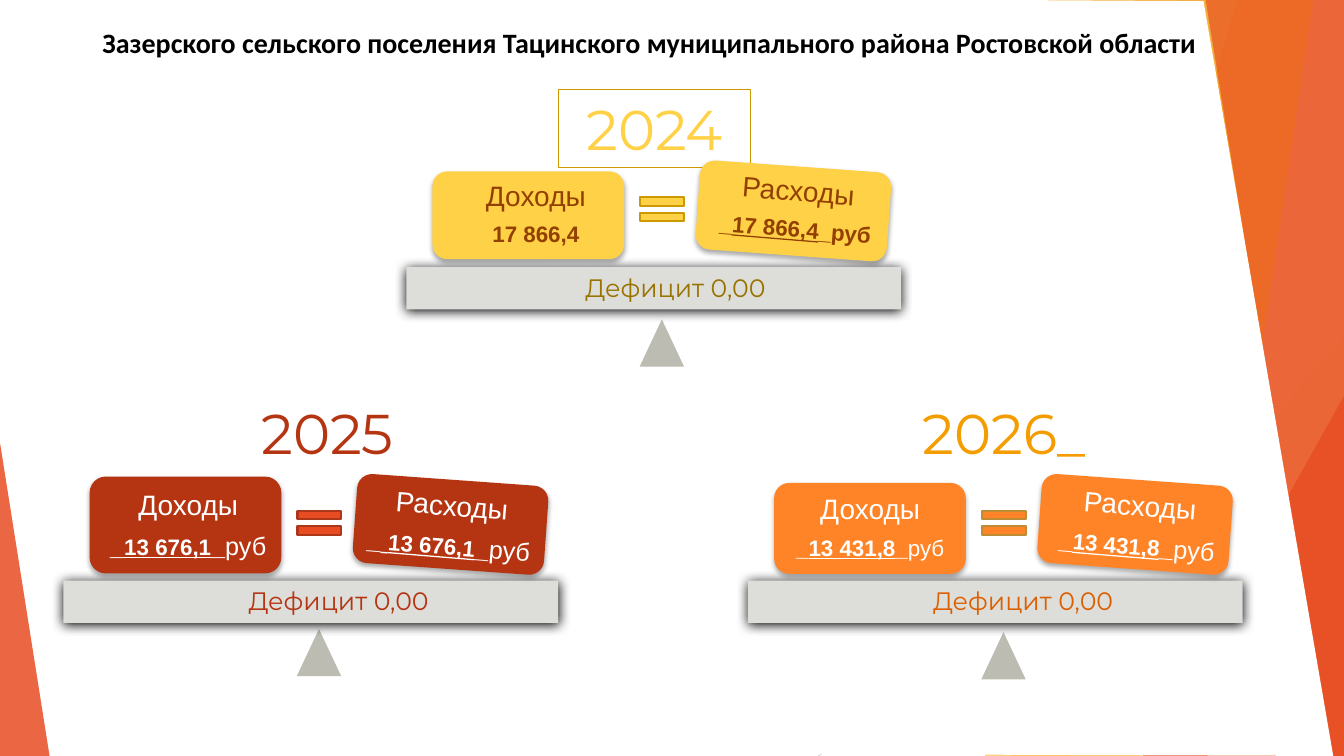
from lxml import etree
from pptx import Presentation
from pptx.dml.color import RGBColor
from pptx.enum import shapes, text
from pptx.oxml import ns
from pptx.util import Cm, Pt

COLORS = {
    "white": "FFFFFF", "black": "000000", "red": "E84C22", "dark red": "B53513",
    "salmon": "F1947A", "amber": "F49D00", "light amber": "FFBD47", "orange": "FF8427",
    "dark orange": "DC5F00", "yellow": "FFD147", "gold": "CC9900", "dark gold": "997300",
    "brown": "933F00", "red edge": "AC3819", "orange edge": "BD8C35",
    "beam": "DDDDD9", "pivot": "BCBCB2", "grey": "BFBFBF", "light grey": "D9D9D9",
}
KINDS = shapes.MSO_SHAPE
WIDTH, HEIGHT = 33.87, 19.05

deck = Presentation()
deck.slide_width, deck.slide_height = Cm(WIDTH), Cm(HEIGHT)
page = deck.slides.add_slide(deck.slide_layouts[6])


def paint(shape, color, opacity=100, edge=None, shadow=None):
    """Fill a shape; shadow is (blur pt, distance pt, opacity %), cast downwards."""
    shape.shadow.inherit = False
    shape.fill.solid()
    shape.fill.fore_color.rgb = RGBColor.from_string(COLORS[color])
    if opacity < 100:
        tint = shape.fill._xPr.find(".//" + ns.qn("a:srgbClr"))
        etree.SubElement(tint, ns.qn("a:alpha"), val=str(opacity * 1000))
    if edge:
        shape.line.color.rgb = RGBColor.from_string(COLORS[edge])
        shape.line.width = Pt(1.5)
    else:
        shape.line.fill.background()
    if shadow:
        blur, distance, strength = shadow
        effects = shape._element.spPr.find(ns.qn("a:effectLst"))
        cast = etree.SubElement(effects, ns.qn("a:outerShdw"), blurRad=str(Pt(blur)),
                                dist=str(Pt(distance)), dir="5400000", rotWithShape="0")
        shade = etree.SubElement(cast, ns.qn("a:srgbClr"), val=COLORS["black"])
        etree.SubElement(shade, ns.qn("a:alpha"), val=str(strength * 1000))


def write(left, top, width, height, lines, font, color, after=0):
    """Add centred text; each line is a list of (wording, size, bold, underline)."""
    box = page.shapes.add_textbox(Cm(left), Cm(top), Cm(width), Cm(height))
    frame = box.text_frame
    frame.word_wrap = True
    for number, spans in enumerate(lines):
        para = frame.add_paragraph() if number else frame.paragraphs[0]
        para.alignment = text.PP_ALIGN.CENTER
        para.space_after = Pt(after)
        for wording, size, bold, underline in spans:
            span = para.add_run()
            span.text = wording
            span.font.name, span.font.size = font, Pt(size)
            span.font.bold, span.font.underline = bold, underline
            span.font.color.rgb = RGBColor.from_string(COLORS[color])
    return box


# Thin background lines
for x1, y1, x2, y2, color in [(26.04, 0, 29.41, HEIGHT, "grey"),
                              (WIDTH, 10.24, 20.62, HEIGHT, "light grey")]:
    line = page.shapes.add_connector(shapes.MSO_CONNECTOR.STRAIGHT,
                                     Cm(x1), Cm(y1), Cm(x2), Cm(y2))
    line.line.color.rgb = RGBColor.from_string(COLORS[color])
    line.line.width = Pt(0.75)
    etree.SubElement(line._element.spPr, ns.qn("a:effectLst"))

# Slanted panels (top x, bottom x) and corner triangles (left, top, width, apex)
facets = [
    ((31.19, 25.5), "red", 30), ((26.67, 30.05), "red", 20),
    ((24.82, 8.46, 9.05, 1), "light amber", 72), ((25.93, 32.79), "amber", 70),
    ((33.1, 30.28), "salmon", 70), ((30.38, 33.48), "red", 65),
    ((28.8, 9.98, 5.07, 1), "red", 80), ((0, 11.15, 1.25, 0), "red", 85),
]
for place, color, opacity in facets:
    if len(place) == 2:
        top_x, bottom_x = place
        outline = page.shapes.build_freeform(Cm(top_x), Cm(-0.02))
        outline.add_line_segments([(Cm(WIDTH), Cm(-0.02)), (Cm(WIDTH), Cm(HEIGHT)),
                                   (Cm(bottom_x), Cm(HEIGHT))])
        facet = outline.convert_to_shape()
    else:
        left, top, width, apex = place
        facet = page.shapes.add_shape(KINDS.ISOSCELES_TRIANGLE, Cm(left), Cm(top),
                                      Cm(width), Cm(HEIGHT - top))
        facet.adjustments[0] = apex
    paint(facet, color, opacity)

# White area over the facets
outline = page.shapes.build_freeform(Cm(30.33), Cm(0.03))
outline.add_line_segments([(Cm(x), Cm(y)) for x, y in [
    (33.6, 19.05), (19.96, 19), (26.49, 14.22), (27.18, 10.39), (25.17, 0)]])
paint(outline.convert_to_shape(), "white")

# Balance scales; places inside a scale are offsets from the left top of its beam
scales = [
    dict(beam=(18.85, 14.63), year="2026_", year_at=(4.04, -4.7), year_color="amber",
         card="orange", equal=("orange", "orange edge"), ink="white",
         deficit="dark orange", deficit_x=2.44, pivot_y=1.3, income_card=(-2.46, 2.29),
         income_at=(0.58, -2.36, 5), expense_at=(7.29, -2.46, 5.11),
         income=[("_", 16, True, False), ("13 431,8", 16, True, True),
                 ("_", 16, True, False), ("руб", 16, False, False)],
         expense=[("_", 18, True, False), ("13 431,8", 16, True, True),
                  ("_", 18, True, False), ("руб", 18, False, False)]),
    dict(beam=(1.6, 14.63), year="2025", year_at=(4.24, -4.72), year_color="dark red",
         card="dark red", equal=("red", "red edge"), ink="white",
         deficit="dark red", deficit_x=2.44, pivot_y=1.22, income_card=(-2.62, 2.44),
         income_at=(0.53, -2.46, 5.23), expense_at=(7.09, -2.46, 5.33),
         income=[("_", 18, True, False), ("13 676,1", 16, True, True),
                 ("_", 18, True, False), ("руб", 18, False, False)],
         expense=[("_", 18, True, False), (" ", 18, True, True),
                  ("13 676,1", 16, True, True), ("_", 18, True, False),
                  ("руб", 18, False, False)]),
    dict(beam=(10.24, 6.73), year="2024", year_at=(3.84, -4.47), year_color="yellow",
         card="yellow", equal=("yellow", "gold"), ink="brown",
         deficit="dark gold", deficit_x=2.29, pivot_y=1.32, income_card=(-2.41, 2.21),
         income_at=(0.71, -2.36, 5.11), expense_at=(7.29, -2.49, 5.11),
         income=[("17 866,4", 16, True, False)],
         expense=[("_", 16, True, False), ("17 866,4", 16, True, True),
                  ("_руб", 16, True, False)]),
]
for scale in scales:
    x, y = scale["beam"]

    # Year
    dx, dy = scale["year_at"]
    year = write(x + dx, y + dy, 4.83, 1.96, [[(scale["year"], 40, False, False)]],
                 "Montserrat", scale["year_color"])
    if scale["year"] == "2024":
        year.line.color.rgb = RGBColor.from_string(COLORS["gold"])
        year.line.width = Pt(0.75)

    # Pivot, beam, cards and equals sign
    card_y, card_height = scale["income_card"]
    card_shadow = (3.5, 2.2, 32)
    parts = [
        (KINDS.ISOSCELES_TRIANGLE, 5.88, scale["pivot_y"], 1.12, 1.19, 0,
         "pivot", None, None),
        (KINDS.RECTANGLE, 0, 0, 12.47, 1.07, 0, "beam", None, (8.5, 1, 100)),
        (KINDS.FLOWCHART_ALTERNATE_PROCESS, 0.66, card_y, 4.83, card_height, 0,
         scale["card"], None, card_shadow),
        (KINDS.FLOWCHART_ALTERNATE_PROCESS, 7.34, -2.54, 4.83, 2.25, 4.1,
         scale["card"], None, card_shadow),
        (KINDS.MATH_EQUAL, 5.7, -1.91, 1.5, 0.91, 0, *scale["equal"], None),
    ]
    for kind, dx, dy, width, height, angle, color, edge, shadow in parts:
        part = page.shapes.add_shape(kind, Cm(x + dx), Cm(y + dy), Cm(width), Cm(height))
        part.rotation = angle
        paint(part, color, edge=edge, shadow=shadow)
        if kind == KINDS.MATH_EQUAL:
            part.adjustments[0], part.adjustments[1] = 0.235, 0.195

    # Deficit, income and expense wording
    write(x + scale["deficit_x"], y, 8.99, 1.02, [[("Дефицит 0,00", 18, False, False)]],
          "Montserrat", scale["deficit"])
    for side, title, angle in [("income", "Доходы", 0), ("expense", "Расходы", 4.7)]:
        dx, dy, width = scale[side + "_at"]
        label = write(x + dx, y + dy, width, 2.05,
                      [[(title, 20, False, False)], scale[side]],
                      "Arial", scale["ink"], after=6)
        label.rotation = angle

# Heading
heading = write(0.86, 0.69, 29.74, 1.63, [[(
    "Зазерского сельского поселения Тацинского муниципального района Ростовской области",
    20, True, False)]], "Calibri", "black")
para = heading.text_frame.paragraphs[0]
para.line_spacing = 0.8
para._p.get_or_add_pPr().set("marL", str(Cm(1.27)))

deck.save("out.pptx")
